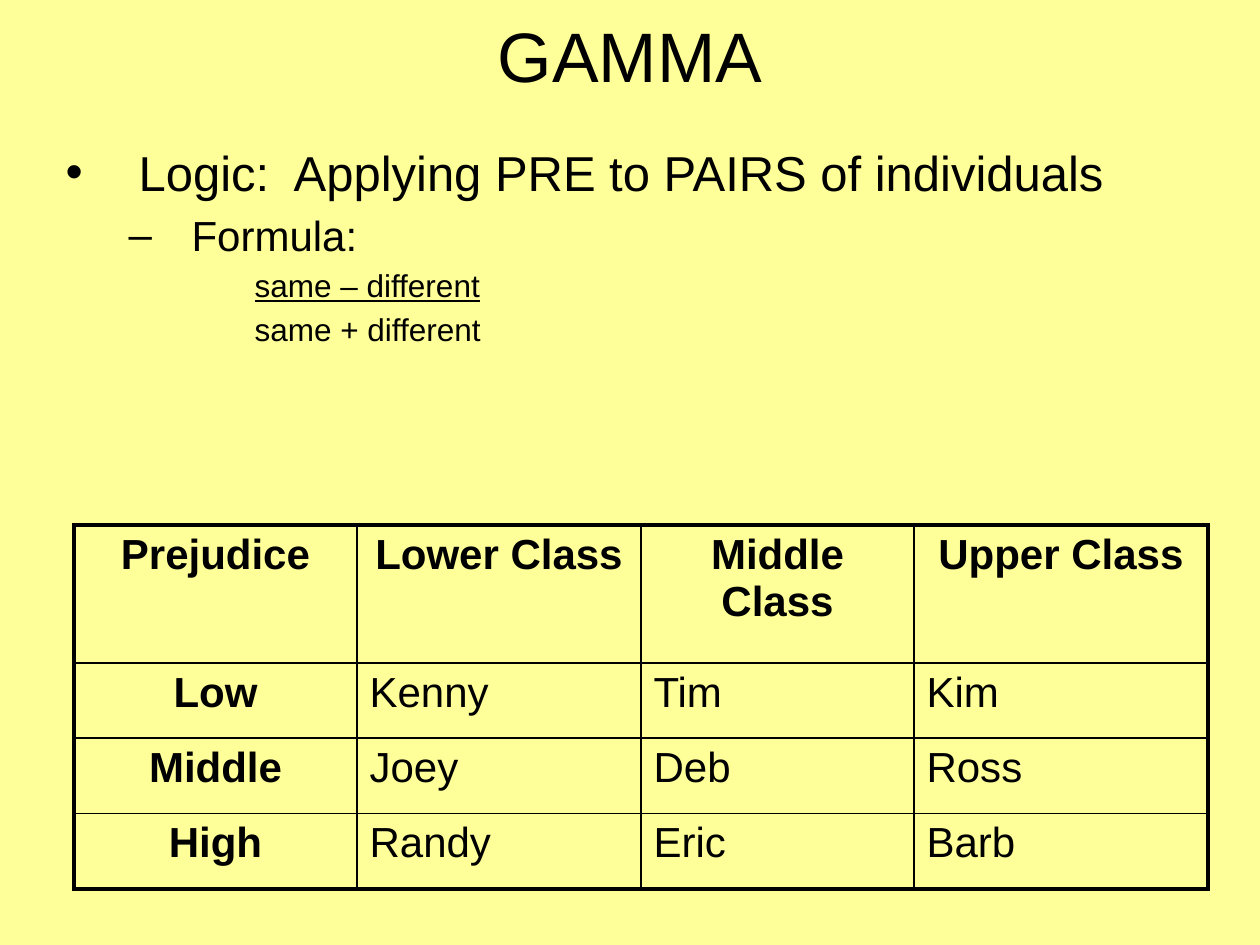
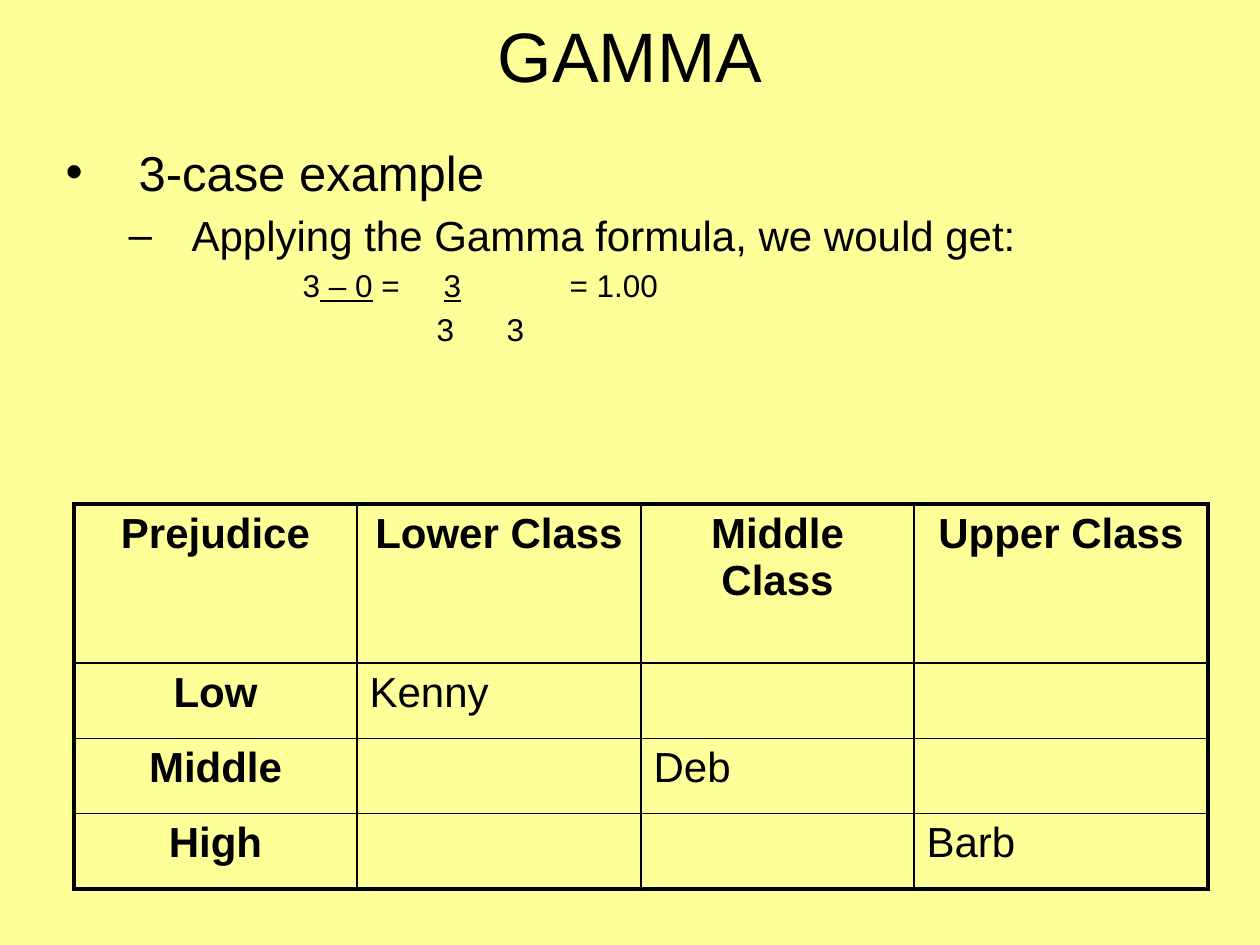
from lxml import etree
from pptx import Presentation
from pptx import util as u
from pptx.dml.color import RGBColor
from pptx.enum import text
from pptx.oxml import ns

EMU_PER_PX = 914400 / 126
COLORS = {"background": "FFFF99", "ink": "000000"}
FONT = "Arial"
TITLE_BOX = (63, 21, 1134, 67)
BODY_BOX = (53, 136, 1134, 420)
TABLE_LEFT, TABLE_BOTTOM = 74, 889
CLASS_ROWS_HEIGHT = 226
COLUMN_WIDTHS = (283, 284, 273, 294)
HEADER = ("Prejudice", "Lower Class", "Middle Class", "Upper Class")
LEVELS = ("Low", "Middle", "High")
OUTER, INNER = 2.25, 1


def px(length):
    return u.Emu(round(length * EMU_PER_PX))


def place(box, left, top, width, height):
    sides = {"left": left, "top": top, "width": width, "height": height}
    for side, length in sides.items():
        setattr(box, side, px(length))


def add_span(para, words, size, **formats):
    span = para.add_run()
    span.text = words
    formats = {"name": FONT, "size": u.Pt(size), **formats}
    for name, value in formats.items():
        setattr(span.font, name, value)
    span.font.color.rgb = RGBColor.from_string(COLORS["ink"])


def set_indent(para, margin, first_line):
    """Set the left margin and first-line offset, and return the properties."""
    props = para._p.get_or_add_pPr()
    props.set("marL", str(px(margin)))
    props.set("indent", str(px(first_line)))
    return props


def add_title(page, words):
    box = page.shapes.title
    place(box, *TITLE_BOX)
    frame = box.text_frame
    frame.auto_size = text.MSO_AUTO_SIZE.NONE
    frame.vertical_anchor = text.MSO_ANCHOR.MIDDLE
    para = frame.paragraphs[0]
    para.alignment = text.PP_ALIGN.CENTER
    add_span(para, words, 40)


def add_formula_line(frame, start, stops, spans):
    """Add an unbulleted line from start, with tab stops and (words, underlined) spans."""
    para = frame.add_paragraph()
    para.level = 3
    props = set_indent(para, 0, start)
    etree.SubElement(props, ns.qn("a:buNone"))
    if stops:
        tabs = etree.SubElement(props, ns.qn("a:tabLst"))
        for stop in stops:
            etree.SubElement(tabs, ns.qn("a:tab"), pos=str(px(stop)), algn="l")
    for words, underlined in spans:
        add_span(para, words, 18, underline=underlined)


def add_body(page, heading, subheading, formula):
    box = page.placeholders[1]
    place(box, *BODY_BOX)
    frame = box.text_frame
    frame.auto_size = text.MSO_AUTO_SIZE.NONE
    outline = ((heading, 28, 73, -73), (subheading, 24, 126, -63))
    for level, (words, size, margin, first_line) in enumerate(outline):
        para = frame.add_paragraph() if level else frame.paragraphs[0]
        para.level = level
        set_indent(para, margin, first_line)
        add_span(para, words, size)
    for line in formula:
        add_formula_line(frame, *line)


def set_borders(cell, widths):
    """Draw the cell's borders from a dict of side letter to points."""
    props = cell._tc.get_or_add_tcPr()
    for side, width in widths.items():
        line = etree.SubElement(props, ns.qn(f"a:ln{side}"), w=str(u.Pt(width)))
        fill = etree.SubElement(line, ns.qn("a:solidFill"))
        etree.SubElement(fill, ns.qn("a:srgbClr"), val=COLORS["ink"])


def add_class_table(page, top, names):
    """Add the prejudice by class table, with names as one row for each level."""
    rows = [HEADER] + [(level, *row) for level, row in zip(LEVELS, names)]
    last_row, last_column = len(rows) - 1, len(HEADER) - 1
    table = page.shapes.add_table(
        len(rows), len(HEADER), px(TABLE_LEFT), px(top),
        px(sum(COLUMN_WIDTHS)), px(TABLE_BOTTOM - top)).table
    table.first_row = table.horz_banding = False
    for column, width in zip(table.columns, COLUMN_WIDTHS):
        column.width = px(width)
    for r, row in enumerate(rows):
        header_height = TABLE_BOTTOM - CLASS_ROWS_HEIGHT - top
        table.rows[r].height = px(CLASS_ROWS_HEIGHT / last_row if r else header_height)
        for c, words in enumerate(row):
            cell = table.cell(r, c)
            edges = {"L": c == 0, "R": c == last_column, "T": r == 0, "B": r == last_row}
            set_borders(cell, {side: OUTER if edge else INNER
                               for side, edge in edges.items()})
            cell.fill.background()
            if not words:
                continue
            label = r == 0 or c == 0
            para = cell.text_frame.paragraphs[0]
            para.alignment = text.PP_ALIGN.CENTER if label else text.PP_ALIGN.LEFT
            add_span(para, words, 24, bold=label)


def add_gamma_page(deck, heading, subheading, formula, table_top, names):
    page = deck.slides.add_slide(deck.slide_layouts[1])
    add_title(page, "GAMMA")
    add_body(page, heading, subheading, formula)
    add_class_table(page, table_top, names)


def main():
    deck = Presentation()
    deck.slide_width, deck.slide_height = px(1260), px(945)
    fill = deck.slide_master.background.fill
    fill.solid()
    fill.fore_color.rgb = RGBColor.from_string(COLORS["background"])

    add_gamma_page(
        deck, "Logic:  Applying PRE to PAIRS of individuals", "Formula:",
        [(189, (), [("same – different", True)]),
         (189, (), [("same + different", False)])],
        525,
        [("Kenny", "Tim", "Kim"), ("Joey", "Deb", "Ross"), ("Randy", "Eric", "Barb")])
    add_gamma_page(
        deck, "3-case example", "Applying the Gamma formula, we would get:",
        [(237, (351, 395, 421),
          [("3", False), (" – 0", True), (" =", False), ("\t3\t", True),
           ("\t= 1.00", False)]),
         (371, (458,), [("3\t3", False)])],
        504,
        [("Kenny", "", ""), ("", "Deb", ""), ("", "", "Barb")])
    deck.save("out.pptx")


if __name__ == "__main__":
    main()
